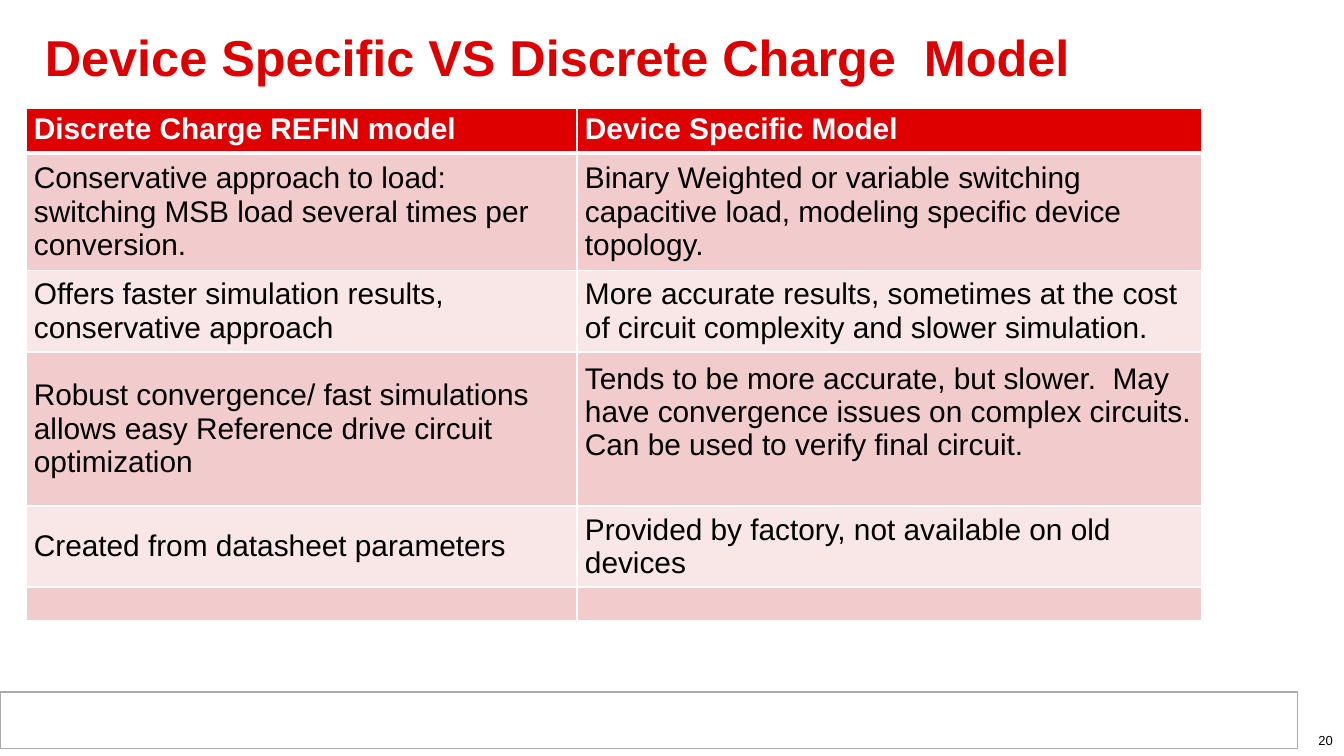
"""Build a slide comparing discrete charge and device specific models."""
from lxml import etree
from pptx import Presentation
from pptx.dml.color import RGBColor
from pptx.enum.shapes import MSO_SHAPE
from pptx.enum.text import MSO_ANCHOR, MSO_AUTO_SIZE, PP_ALIGN
from pptx.oxml.ns import qn
from pptx.util import Pt

RECTANGLE = MSO_SHAPE.RECTANGLE
TOP, MIDDLE = MSO_ANCHOR.TOP, MSO_ANCHOR.MIDDLE
LEFT, RIGHT = PP_ALIGN.LEFT, PP_ALIGN.RIGHT
NO_AUTOFIT = MSO_AUTO_SIZE.NONE

RED = RGBColor(0xDE, 0x00, 0x00)
ROSE = RGBColor(0xF2, 0xCC, 0xCC)
BLUSH = RGBColor(0xF9, 0xE7, 0xE7)
GRAY = RGBColor(0xAA, 0xAA, 0xAA)
WHITE = RGBColor(0xFF, 0xFF, 0xFF)
BLACK = RGBColor(0x00, 0x00, 0x00)

COLUMN_WIDTHS = [295.2, 334.8]
ROW_HEIGHTS = [24, 63, 43.5, 82.5, 43.5, 18]
ROWS = [
    ("Discrete Charge REFIN model", "Device Specific Model"),
    ("Conservative approach to load: switching MSB load several times per conversion.",
     "Binary Weighted or variable switching capacitive load, modeling specific device topology."),
    ("Offers faster simulation results, conservative approach",
     "More accurate results, sometimes at the cost of circuit complexity and slower simulation."),
    ("Robust convergence/ fast simulations allows easy Reference drive circuit optimization",
     "Tends to be more accurate, but slower.  May have convergence issues on complex circuits. "
     "Can be used to verify final circuit."),
    ("Created from datasheet parameters",
     "Provided by factory, not available on old devices"),
    ("", ""),
]


def style_text(para, size, color, bold=False):
    for span in para.runs:
        span.font.name = "Arial"
        span.font.size = Pt(size)
        span.font.bold = bold
        span.font.color.rgb = color


def add_border(cell, side, width):
    properties = cell._tc.get_or_add_tcPr()
    line = etree.SubElement(properties, qn(f"a:ln{side}"), w=str(Pt(width)))
    fill = etree.SubElement(line, qn("a:solidFill"))
    etree.SubElement(fill, qn("a:srgbClr"), val=str(WHITE))


deck = Presentation()
deck.slide_width, deck.slide_height = Pt(720), Pt(405)
page = deck.slides.add_slide(deck.slide_layouts[5])

footer_bar = page.shapes.add_shape(RECTANGLE, Pt(0), Pt(370.8), Pt(695), Pt(30.4))
footer_bar.shadow.inherit = False
footer_bar.fill.solid()
footer_bar.fill.fore_color.rgb = WHITE
footer_bar.line.color.rgb = GRAY
footer_bar.line.width = Pt(0.75)

title = page.shapes.title
title.left, title.top, title.width, title.height = Pt(18), Pt(8.6), Pt(666), Pt(48.2)
frame = title.text_frame
frame.text = "Device Specific VS Discrete Charge  Model"
frame.auto_size = NO_AUTOFIT
frame.vertical_anchor = MIDDLE
frame.margin_left = frame.margin_right = Pt(6)
frame.margin_top = frame.margin_bottom = Pt(3)
para = frame.paragraphs[0]
para.alignment = LEFT
para.line_spacing = 0.85
style_text(para, 27, RED, True)

number_box = page.shapes.add_textbox(Pt(552), Pt(389.5), Pt(168), Pt(12.5))
frame = number_box.text_frame
frame.text = "20"
frame.word_wrap = True
frame.margin_left = Pt(0)
frame.margin_right = Pt(6)
frame.margin_top = frame.margin_bottom = Pt(3)
para = frame.paragraphs[0]
para.alignment = RIGHT
style_text(para, 7, BLACK)

table = page.shapes.add_table(
    len(ROWS), len(COLUMN_WIDTHS), Pt(13.9), Pt(58),
    Pt(sum(COLUMN_WIDTHS)), Pt(sum(ROW_HEIGHTS))).table
for column, width in zip(table.columns, COLUMN_WIDTHS):
    column.width = Pt(width)

for row_index, (texts, height) in enumerate(zip(ROWS, ROW_HEIGHTS)):
    table.rows[row_index].height = Pt(height)
    header = row_index == 0
    for column_index, text in enumerate(texts):
        cell = table.cell(row_index, column_index)
        cell.margin_left = cell.margin_right = Pt(4.3)
        cell.margin_top = cell.margin_bottom = Pt(2.2)
        cell.vertical_anchor = TOP if header else MIDDLE
        for side in "LRTB":
            thick = (header and side == "B") or (row_index == 1 and side == "T")
            add_border(cell, side, 3 if thick else 1)
        cell.fill.solid()
        cell.fill.fore_color.rgb = RED if header else ROSE if row_index % 2 else BLUSH
        para = cell.text_frame.paragraphs[0]
        if text:
            para.text = text
            style_text(para, 16, WHITE if header else BLACK, header)
        else:
            etree.SubElement(para._p, qn("a:endParaRPr"), sz="1000")

table.cell(3, 1).margin_bottom = Pt(20)

deck.save("out.pptx")
